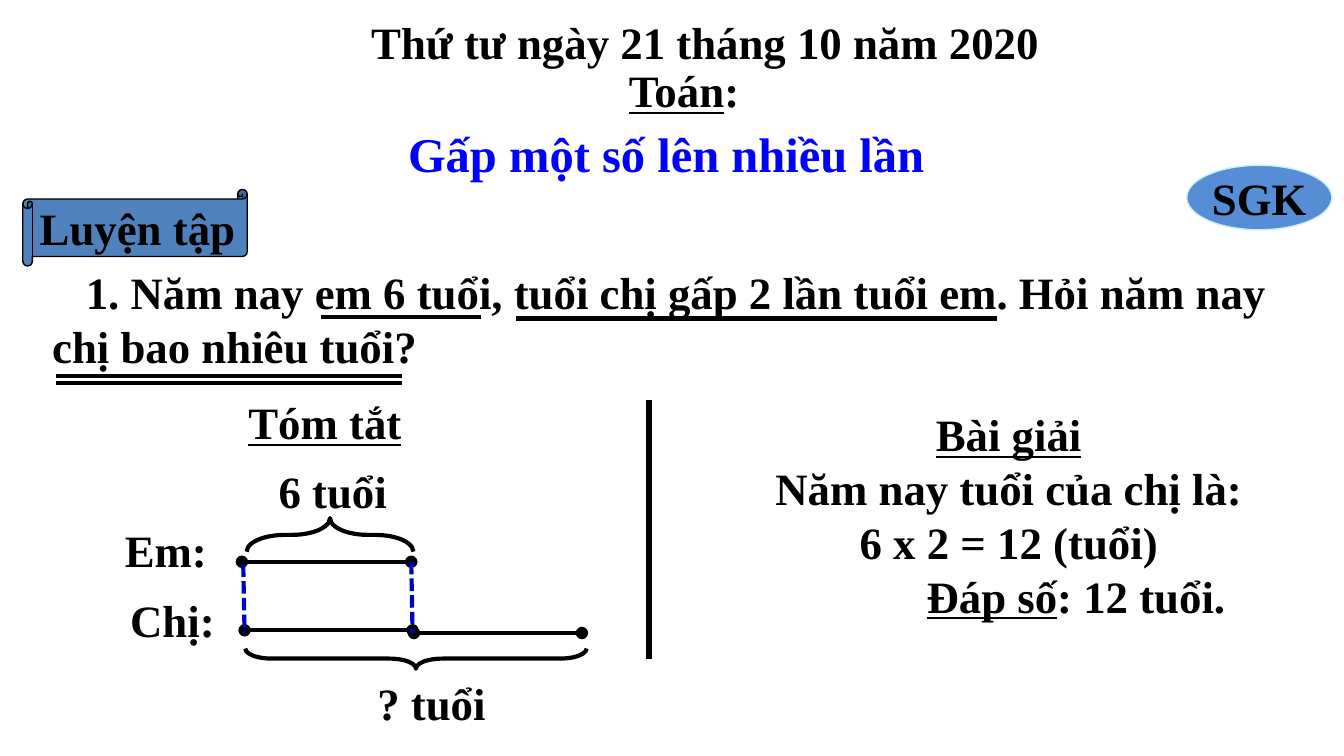
from dataclasses import dataclass

from lxml import etree
from pptx import Presentation
from pptx import util as u
from pptx.dml.color import RGBColor
from pptx.enum import dml, shapes, text
from pptx.oxml import ns

FONT = "Times New Roman"
BLACK = RGBColor(0x00, 0x00, 0x00)
BLUE = RGBColor(0x00, 0x00, 0xFF)
NAVY = RGBColor(0x00, 0x00, 0xCC)
STEEL = RGBColor(0x4F, 0x81, 0xBD)
SKY = RGBColor(0x55, 0x8E, 0xD5)
PALE = RGBColor(0xCC, 0xEC, 0xFF)

LEFT, MID = text.PP_ALIGN.LEFT, text.PP_ALIGN.CENTER
KIND = shapes.MSO_SHAPE


@dataclass
class Para:
    """One line; the part in 'under' is underlined, 'rest' follows it."""
    under: str = ""
    rest: str = ""
    margin: float = 0
    indent: float = 0


@dataclass
class Label:
    box: tuple[float, float, float, float]
    paras: list[Para]
    align: text.PP_ALIGN = MID


@dataclass
class Badge:
    kind: shapes.MSO_SHAPE
    box: tuple[float, float, float, float]
    words: str
    fill: RGBColor
    edge: RGBColor


@dataclass
class Line:
    start: tuple[float, float]
    end: tuple[float, float]
    width: float = 2.25
    color: RGBColor = BLACK
    dots: bool = False
    dash: bool = False


@dataclass
class Brace:
    box: tuple[float, float, float, float]
    turn: int
    curve: float


LABELS = [
    Label((2.58, 0.06, 5.33, 0.5), [Para(rest="Thứ tư ngày 21 tháng 10 năm 2020")]),
    Label((4.58, 0.42, 1.08, 0.5), [Para("Toán", ":")], LEFT),
    Label((0.29, 1.92, 9.33, 0.91), [Para(
        rest="1. Năm nay em 6 tuổi, tuổi chị gấp 2 lần tuổi em. "
             "Hỏi năm nay chị bao nhiêu tuổi?", indent=0.25)], LEFT),
    Label((5.55, 2.98, 3.91, 1.72), [
        Para("Bài giải"),
        Para(rest="Năm nay tuổi của chị là:"),
        Para(rest="6 x 2 = 12 (tuổi)"),
        Para("Đáp số", ": 12 tuổi.", margin=1)]),
    Label((1.67, 2.89, 1.76, 0.5), [Para("Tóm tắt", margin=0.08)], LEFT),
    Label((1.73, 3.4, 1.49, 0.5), [Para(rest="6 tuổi")]),
    Label((0.75, 3.84, 1.08, 0.5), [Para(rest="Em:", margin=0.08)], LEFT),
    Label((0.79, 4.36, 0.94, 0.5), [Para(rest="Chị:", margin=0.08)], LEFT),
    Label((2.57, 4.98, 1.28, 0.5), [Para(rest="? tuổi")]),
]

BADGES = [
    Badge(KIND.HORIZONTAL_SCROLL, (0.17, 1.41, 1.67, 0.57), "Luyện tập", STEEL, BLACK),
    Badge(KIND.OVAL, (8.83, 1.23, 1.08, 0.48), "SGK", SKY, PALE),
]

LINES = [
    Line((1.82, 4.69), (3.07, 4.69), dots=True),
    Line((3.08, 4.71), (4.33, 4.71), dots=True),
    Line((1.8, 4.18), (3.06, 4.18), dots=True),
    Line((1.81, 4.2), (1.82, 4.71), color=NAVY, dash=True),
    Line((3.06, 4.18), (3.07, 4.71), color=NAVY, dash=True),
    Line((4.83, 2.98), (4.83, 4.9), width=3),
    Line((2.39, 2.36), (3.58, 2.36)),
    Line((3.84, 2.37), (7.42, 2.37)),
    *(Line((0.42, y), (2.99, y)) for y in (2.8, 2.85)),
]

BRACES = [
    Brace((2.33, 3.36, 0.25, 1.24), 90, 1.13),
    Brace((3.02, 3.63, 0.15, 2.54), 270, 1.31),
]


def style(para, align: text.PP_ALIGN, size: int = 24, color: RGBColor = BLACK) -> None:
    para.alignment = align
    font = para.font
    font.name, font.size, font.bold = FONT, u.Pt(size), True
    font.color.rgb = color


def add_title(slide, words: str) -> None:
    title = slide.shapes.title
    title.left, title.top, title.width, title.height = map(
        u.Inches, (1.17, 0.87, 7.58, 0.54))
    frame = title.text_frame
    frame.text = words
    frame.auto_size = text.MSO_AUTO_SIZE.NONE
    frame.vertical_anchor = text.MSO_ANCHOR.TOP
    style(frame.paragraphs[0], MID, 26, BLUE)


def add_label(slide, label: Label) -> None:
    frame = slide.shapes.add_textbox(*map(u.Inches, label.box)).text_frame
    frame.word_wrap = True
    for i, item in enumerate(label.paras):
        para = frame.add_paragraph() if i else frame.paragraphs[0]
        style(para, label.align)
        props = para._p.get_or_add_pPr()
        props.set("marL", str(u.Inches(item.margin)))
        props.set("indent", str(u.Inches(item.indent)))
        for words, lined in ((item.under, True), (item.rest, False)):
            if words:
                run = para.add_run()
                run.text = words
                run.font.underline = lined


def add_badge(slide, badge: Badge) -> None:
    shape = slide.shapes.add_shape(badge.kind, *map(u.Inches, badge.box))
    shape.shadow.inherit = False
    shape.fill.solid()
    shape.fill.fore_color.rgb = badge.fill
    shape.line.color.rgb = badge.edge
    shape.line.width = u.Pt(0.75)
    frame = shape.text_frame
    frame.text = badge.words
    frame.word_wrap = False
    frame.vertical_anchor = text.MSO_ANCHOR.MIDDLE
    style(frame.paragraphs[0], MID)


def add_line(slide, item: Line) -> None:
    line = slide.shapes.add_connector(
        shapes.MSO_CONNECTOR.STRAIGHT, *map(u.Inches, item.start + item.end))
    line.line.color.rgb = item.color
    line.line.width = u.Pt(item.width)
    if item.dash:
        line.line.dash_style = dml.MSO_LINE.SQUARE_DOT
    if item.dots:
        edge = line.line._get_or_add_ln()
        for end in ("a:headEnd", "a:tailEnd"):
            etree.SubElement(edge, ns.qn(end), type="oval")
    etree.SubElement(line._element.spPr, ns.qn("a:effectLst"))


def add_brace(slide, item: Brace) -> None:
    brace = slide.shapes.add_shape(KIND.LEFT_BRACE, *map(u.Inches, item.box))
    brace.shadow.inherit = False
    brace.rotation = item.turn
    brace.adjustments[0] = item.curve
    brace.fill.background()
    brace.line.color.rgb = BLACK
    brace.line.width = u.Pt(2.25)


def main() -> None:
    deck = Presentation()
    deck.slide_width = u.Inches(10)
    deck.slide_height = deck.slide_width * 9 // 16
    slide = deck.slides.add_slide(deck.slide_layouts[5])
    add_title(slide, "Gấp một số lên nhiều lần")
    for draw, items in ((add_badge, BADGES), (add_label, LABELS),
                        (add_line, LINES), (add_brace, BRACES)):
        for item in items:
            draw(slide, item)
    deck.save("out.pptx")


if __name__ == "__main__":
    main()
